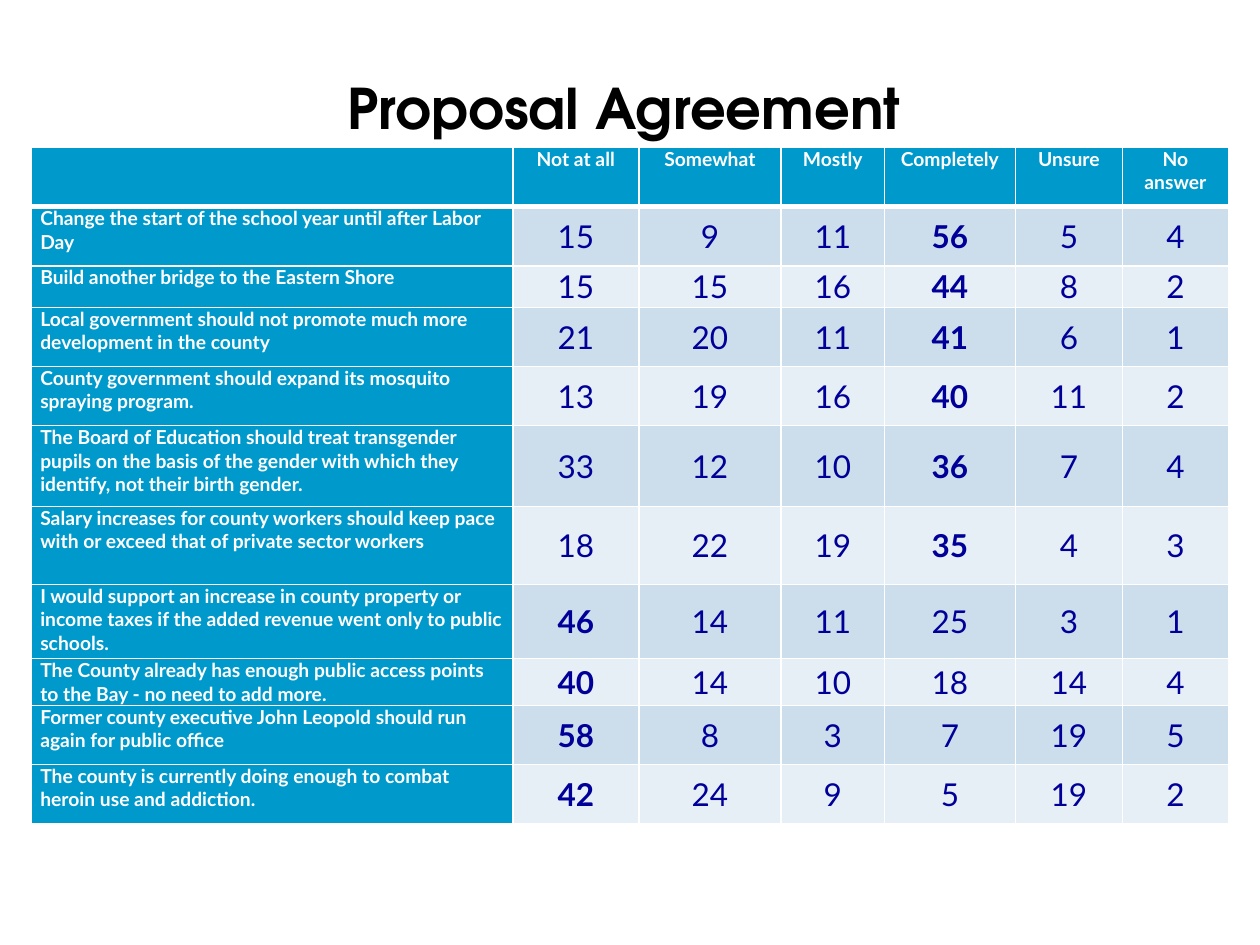
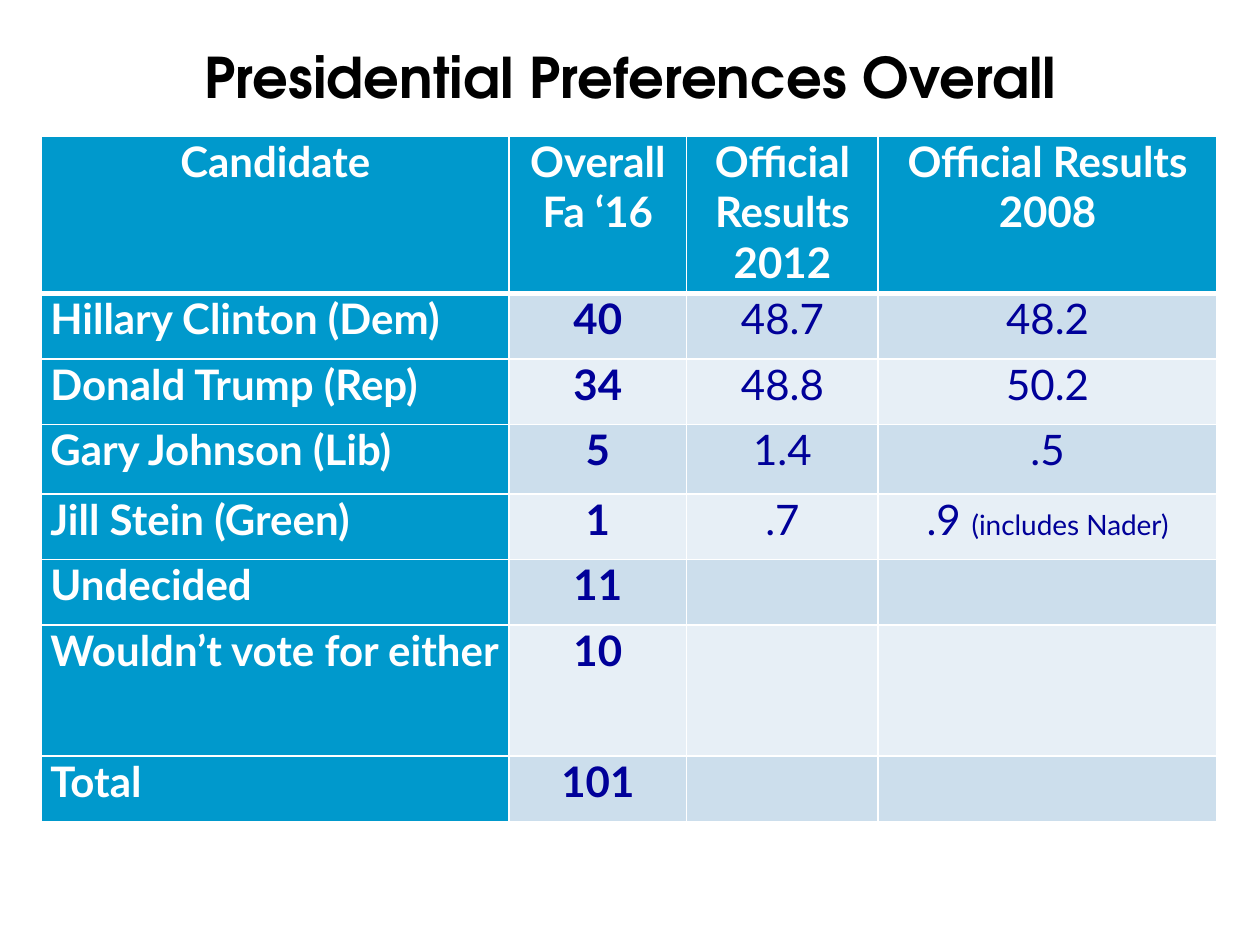
from lxml.etree import SubElement
from pptx import Presentation
from pptx.dml.color import RGBColor
from pptx.enum.text import MSO_ANCHOR, PP_ALIGN
from pptx.oxml.ns import qn
from pptx.util import Inches, Pt

TITLE_FONT, BODY_FONT = "TeX Gyre Adventor", "Lato"
BLACK, WHITE, HEADER_BLUE, VALUE_BLUE = "000000", "FFFFFF", "0099CC", "000099"
BANDS = ("CCDEEC", "E7EFF6")
NOTE_SIZE = 16

PROPOSALS = [
    ("Change the start of the school year until after Labor Day", 15, 9, 11, 56, 5, 4),
    ("Build another bridge to the Eastern Shore", 15, 15, 16, 44, 8, 2),
    ("Local government should not promote much more development in the county",
     21, 20, 11, 41, 6, 1),
    ("County government should expand its mosquito spraying program.",
     13, 19, 16, 40, 11, 2),
    ("The Board of Education should treat transgender pupils on the basis of the gender "
     "with which they identify, not their birth gender.", 33, 12, 10, 36, 7, 4),
    ("Salary increases for county workers should keep pace with or exceed that of "
     "private sector workers", 18, 22, 19, 35, 4, 3),
    ("I would support an increase in county property or income taxes if the added "
     "revenue went only to public schools.", 46, 14, 11, 25, 3, 1),
    ("The County already has enough public access points to the Bay - no need to add more.",
     40, 14, 10, 18, 14, 4),
    ("Former county executive John Leopold should run again for public office",
     58, 8, 3, 7, 19, 5),
    ("The county is currently doing enough to combat heroin use and addiction.",
     42, 24, 9, 5, 19, 2),
]

# A tuple inside a row holds a value and a smaller note after it.
CANDIDATES = [
    ("Hillary Clinton (Dem)", "40", "48.7", "48.2"),
    ("Donald Trump (Rep)", "34", "48.8", "50.2"),
    ("Gary Johnson (Lib)", "5", "1.4", ".5"),
    ("Jill Stein (Green)", "1", ".7", (".9 ", "(includes Nader)")),
    ("Undecided", "11", "", ""),
    ("Wouldn’t vote for either", "10", "", ""),
    ("Total", "101", "", ""),
]


def is_top_answer(row, column):
    return row[column] == max(row[1:])


def is_current_poll(row, column):
    return column == 1


SLIDES = [
    dict(title="Proposal Agreement", title_box=(0.58, 0.42, 8.75, 0.75),
         header=("", "Not at all", "Somewhat", "Mostly", "Completely", "Unsure", "No answer"),
         rows=PROPOSALS, corner=(0.25, 1.17),
         widths=(3.82, 1, 1.13, 0.82, 1.04, 0.85, 0.84),
         heights=(0.47, 0.47, 0.33, 0.47, 0.47, 0.64, 0.62, 0.59, 0.3, 0.47, 0.47),
         label_size=11, value_size=18, value_anchor=MSO_ANCHOR.MIDDLE,
         is_bold=is_top_answer),
    dict(title="Presidential Preferences Overall", title_box=(0.17, 0.17, 9.67, 0.75),
         header=("Candidate", "Overall\nFa ‘16", "Official Results 2012",
                 "Official Results 2008"),
         rows=CANDIDATES, corner=(0.33, 1.08),
         widths=(3.71, 1.41, 1.52, 2.69),
         heights=(1.25, 0.52, 0.52, 0.55, 0.52, 0.52, 1.04, 0.52),
         label_size=24, value_size=24, value_anchor=MSO_ANCHOR.TOP,
         is_bold=is_current_poll),
]


def rgb(color):
    return RGBColor.from_string(color)


def add_run(paragraph, text, font_name, size, color, bold):
    run = paragraph.add_run()
    run.text = text
    run.font.name = font_name
    run.font.size = Pt(size)
    run.font.color.rgb = rgb(color)
    run.font.bold = bold


def add_title(slide, text, box):
    title = slide.shapes.title
    title.left, title.top, title.width, title.height = map(Inches, box)
    title.text_frame.vertical_anchor = MSO_ANCHOR.BOTTOM
    paragraph = title.text_frame.paragraphs[0]
    paragraph.alignment = PP_ALIGN.CENTER
    add_run(paragraph, text, TITLE_FONT, 32, BLACK, True)


def style_cell(cell, fill, anchor, top_line, bottom_line):
    """Set borders first, since the schema wants them before the fill."""
    properties = cell._tc.get_or_add_tcPr()
    for side, points in (("L", 1), ("R", 1), ("T", top_line), ("B", bottom_line)):
        line = SubElement(properties, qn(f"a:ln{side}"), w=str(Pt(points)))
        SubElement(SubElement(line, qn("a:solidFill")), qn("a:srgbClr"), val=WHITE)
    cell.fill.solid()
    cell.fill.fore_color.rgb = rgb(fill)
    cell.margin_left = cell.margin_right = Inches(0.07)
    cell.margin_top = cell.margin_bottom = 0
    cell.vertical_anchor = anchor


def write_cell(cell, content, size, color, bold, alignment):
    value, note = content if isinstance(content, tuple) else (str(content), "")
    frame = cell.text_frame
    for index, text in enumerate(value.split("\n")):
        paragraph = frame.add_paragraph() if index else frame.paragraphs[0]
        paragraph.alignment = alignment
        if text:
            add_run(paragraph, text, BODY_FONT, size, color, bold)
    if note:
        add_run(paragraph, note, BODY_FONT, NOTE_SIZE, color, bold)


def add_results_table(slide, spec):
    rows = [spec["header"], *spec["rows"]]
    widths, heights = spec["widths"], spec["heights"]
    box = (*spec["corner"], sum(widths), sum(heights))
    table = slide.shapes.add_table(len(rows), len(widths), *map(Inches, box)).table
    for column, width in zip(table.columns, widths):
        column.width = Inches(width)
    for table_row, height in zip(table.rows, heights):
        table_row.height = Inches(height)
    table.first_col = True

    for r, row in enumerate(rows):
        for c, content in enumerate(row):
            cell = table.cell(r, c)
            is_label = r == 0 or c == 0
            style_cell(cell,
                       HEADER_BLUE if is_label else BANDS[(r - 1) % 2],
                       MSO_ANCHOR.TOP if is_label else spec["value_anchor"],
                       top_line=3 if r == 1 else 1, bottom_line=3 if r == 0 else 1)
            write_cell(cell, content,
                       spec["label_size"] if is_label else spec["value_size"],
                       WHITE if is_label else VALUE_BLUE,
                       is_label or spec["is_bold"](row, c),
                       PP_ALIGN.LEFT if r and c == 0 else PP_ALIGN.CENTER)


def main():
    deck = Presentation()
    deck.slide_width, deck.slide_height = Inches(10), Inches(7.5)
    title_only = deck.slide_layouts.get_by_name("Title Only")
    for content in SLIDES:
        slide = deck.slides.add_slide(title_only)
        add_title(slide, content["title"], content["title_box"])
        add_results_table(slide, content)
    deck.save("out.pptx")


if __name__ == "__main__":
    main()
